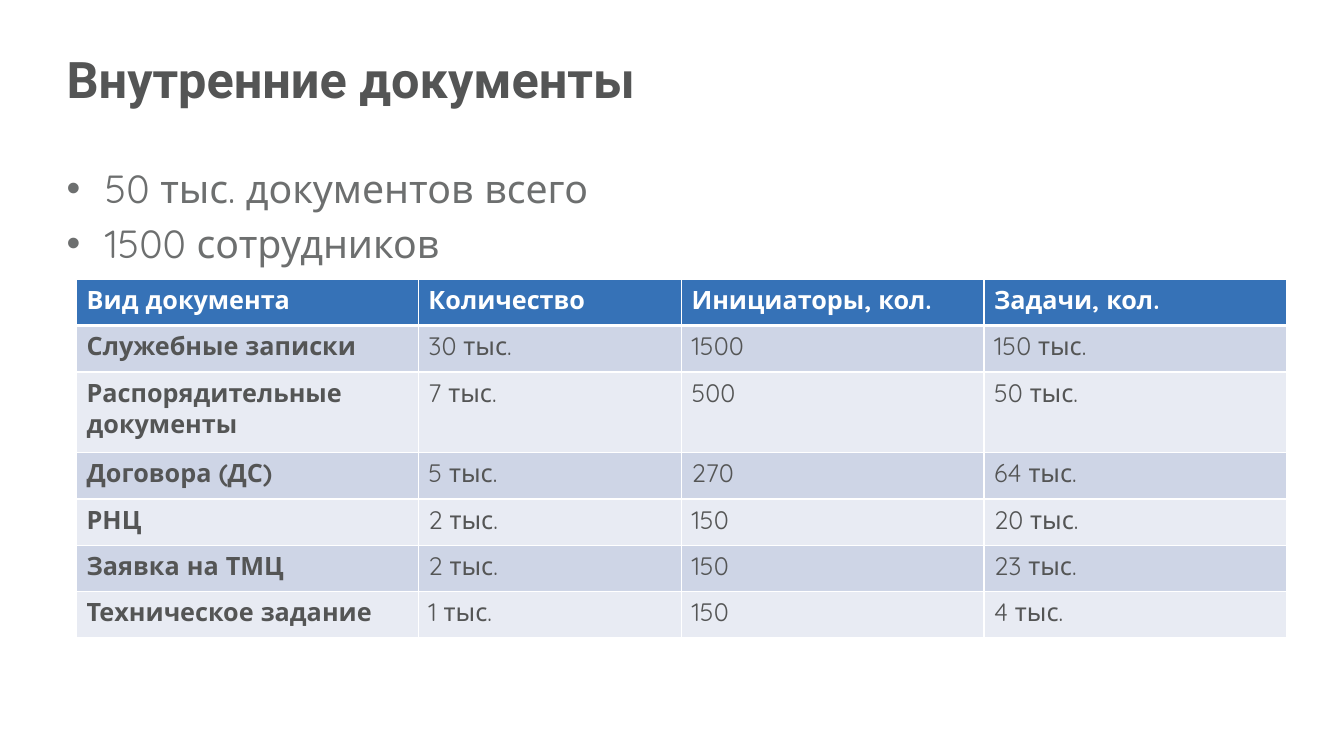
from dataclasses import dataclass

from lxml import etree
from pptx import Presentation
from pptx.dml.color import RGBColor
from pptx.enum.text import MSO_ANCHOR as Anchor, MSO_AUTO_SIZE as AutoSize, PP_ALIGN as Align
from pptx.oxml.ns import qn
from pptx.util import Inches, Pt

WHITE, DARK, GRAY = "FFFFFF", "545555", "6D6F6F"
HEADER_FILL, BAND_FILLS = "3672B7", ("CED5E6", "E8EBF3")


@dataclass
class DocumentKind:
    name: str
    count: str
    initiators: str
    tasks: str


HEADER = DocumentKind("Вид документа", "Количество", "Инициаторы, кол.", "Задачи, кол.")
KINDS = [
    DocumentKind("Служебные записки", "30 тыс.", "1500", "150 тыс."),
    DocumentKind("Распорядительные документы", "7 тыс.", "500", "50 тыс."),
    DocumentKind("Договора (ДС)", "5 тыс.", "270", "64 тыс."),
    DocumentKind("РНЦ", "2 тыс.", "150", "20 тыс."),
    DocumentKind("Заявка на ТМЦ", "2 тыс.", "150", "23 тыс."),
    DocumentKind("Техническое задание", "1 тыс.", "150", "4 тыс."),
]
COLUMN_WIDTHS = (3.39, 2.61, 3, 3)
ROW_HEIGHTS = (0.46, 0.46, 0.8, 0.46, 0.46, 0.46, 0.46)


def rgb(color: str) -> RGBColor:
    return RGBColor.from_string(color)


def add_text(p, text: str, *, size: float, color: str,
             font: str = "Quicksand", bold: bool = False) -> None:
    p.alignment = Align.LEFT
    r = p.add_run()
    r.text = text
    r.font.name, r.font.size, r.font.bold = font, Pt(size), bold
    r.font.color.rgb = rgb(color)


def place(sp, left: float, top: float, width: float, height: float) -> None:
    sp.left, sp.top = Inches(left), Inches(top)
    sp.width, sp.height = Inches(width), Inches(height)


def set_bullet(p, char: str, indent: float) -> None:
    pPr = p._p.get_or_add_pPr()
    pPr.set("marL", str(Inches(indent)))
    pPr.set("indent", str(-Inches(indent)))
    etree.SubElement(pPr, qn("a:buFont")).set("typeface", "Arial")
    etree.SubElement(pPr, qn("a:buChar")).set("char", char)


def set_borders(cell, **widths: float) -> None:
    tcPr = cell._tc.get_or_add_tcPr()
    for side, width in widths.items():
        ln = etree.SubElement(tcPr, qn(f"a:ln{side}"), w=str(Pt(width)))
        fill = etree.SubElement(ln, qn("a:solidFill"))
        etree.SubElement(fill, qn("a:srgbClr")).set("val", WHITE)


def fill_row(table, row: int, kind: DocumentKind) -> None:
    is_header = row == 0
    fill = HEADER_FILL if is_header else BAND_FILLS[(row - 1) % 2]
    values = (kind.name, kind.count, kind.initiators, kind.tasks)
    for col, value in enumerate(values):
        cell = table.cell(row, col)
        set_borders(cell, L=1, R=1, T=3 if row == 1 else 1, B=3 if is_header else 1)
        cell.fill.solid()
        cell.fill.fore_color.rgb = rgb(fill)
        add_text(cell.text_frame.paragraphs[0], value, size=18,
                 color=WHITE if is_header else DARK, bold=is_header or col == 0)


def main() -> None:
    prs = Presentation()
    prs.slide_width, prs.slide_height = Inches(13.33), Inches(7.5)
    s = prs.slides.add_slide(prs.slide_layouts[1])

    # Title
    title = s.shapes.title
    place(title, 0.56, 0.23, 12.2, 0.9)
    title.text_frame.auto_size = AutoSize.NONE
    title.text_frame.vertical_anchor = Anchor.BOTTOM
    add_text(title.text_frame.paragraphs[0], "Внутренние документы",
             size=36, color=DARK, font="Roboto", bold=True)

    # Key figures
    body = s.placeholders[1]
    place(body, 0.56, 1.58, 7.22, 5.02)
    tf = body.text_frame
    tf.auto_size = AutoSize.NONE
    for i, text in enumerate(("50 тыс. документов всего", "1500 сотрудников")):
        p = tf.add_paragraph() if i else tf.paragraphs[0]
        if i == 0:
            p.space_before = Pt(0)
        set_bullet(p, "•", 0.38)
        add_text(p, text, size=28, color=GRAY)

    # Table of document kinds
    rows = [HEADER, *KINDS]
    frame = s.shapes.add_table(len(rows), len(COLUMN_WIDTHS), Inches(0.76), Inches(2.77),
                               Inches(sum(COLUMN_WIDTHS)), Inches(sum(ROW_HEIGHTS)))
    table = frame.table
    for column, width in zip(table.columns, COLUMN_WIDTHS):
        column.width = Inches(width)
    for row, height in zip(table.rows, ROW_HEIGHTS):
        row.height = Inches(height)
    for i, kind in enumerate(rows):
        fill_row(table, i, kind)

    prs.save("out.pptx")


if __name__ == "__main__":
    main()
